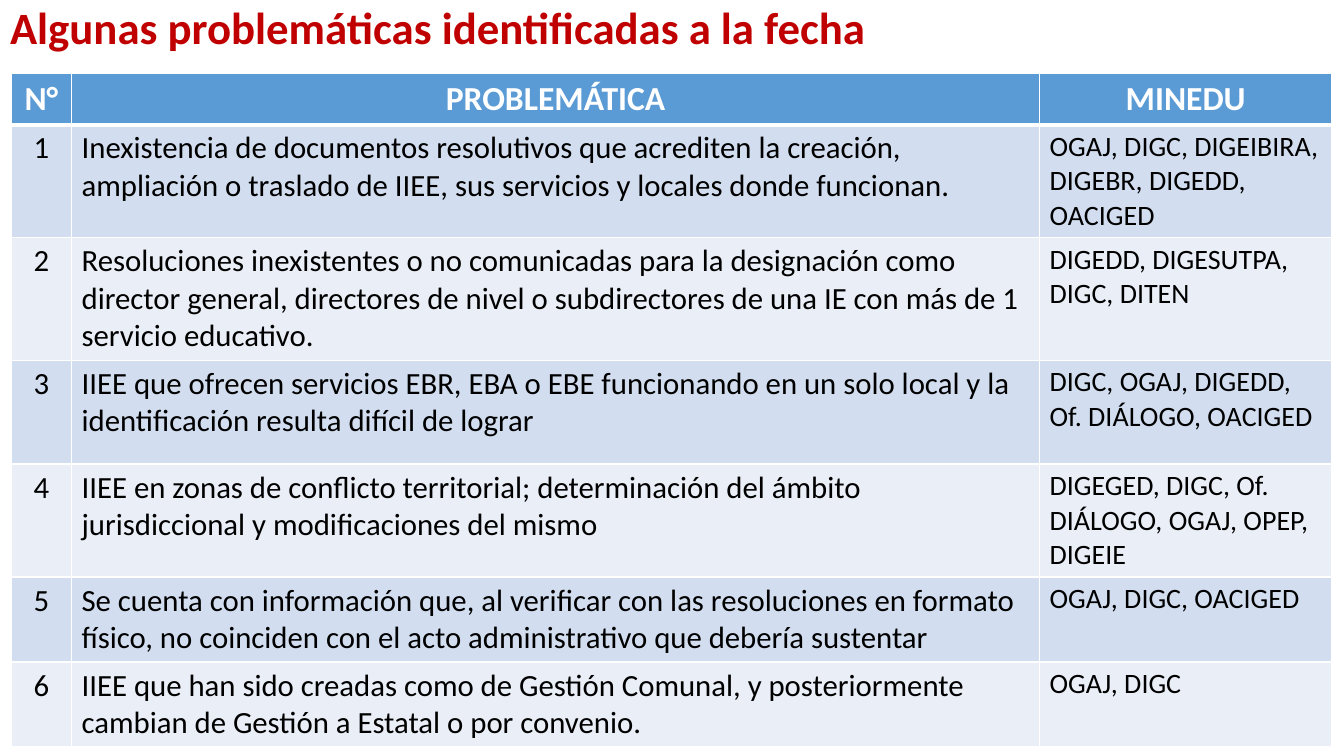
import pptx
import pptx.dml.color
import pptx.enum.text
import pptx.oxml
import pptx.oxml.ns
import pptx.util

Inches, Pt = pptx.util.Inches, pptx.util.Pt
LEFT, CENTER = pptx.enum.text.PP_ALIGN.LEFT, pptx.enum.text.PP_ALIGN.CENTER
RGB = pptx.dml.color.RGBColor.from_string

HEADER = ("N°", "PROBLEMÁTICA", "MINEDU")
ISSUES = [
    ("Inexistencia de documentos resolutivos que acrediten la creación, ampliación o "
     "traslado de IIEE, sus servicios y locales donde funcionan.",
     "OGAJ, DIGC, DIGEIBIRA, DIGEBR, DIGEDD, OACIGED"),
    ("Resoluciones inexistentes o no comunicadas para la designación como director general, "
     "directores de nivel o subdirectores de una IE con más de 1 servicio educativo.",
     "DIGEDD, DIGESUTPA, DIGC, DITEN"),
    ("IIEE que ofrecen servicios EBR, EBA o EBE funcionando en un solo local y la "
     "identificación resulta difícil de lograr",
     "DIGC, OGAJ, DIGEDD, Of. DIÁLOGO, OACIGED"),
    ("IIEE en zonas de conflicto territorial; determinación del ámbito jurisdiccional y "
     "modificaciones del mismo",
     "DIGEGED, DIGC, Of. DIÁLOGO, OGAJ, OPEP, DIGEIE"),
    ("Se cuenta con información que, al verificar con las resoluciones en formato físico, "
     "no coinciden con el acto administrativo que debería sustentar",
     "OGAJ, DIGC, OACIGED"),
    ("IIEE que han sido creadas como de Gestión Comunal, y posteriormente cambian de "
     "Gestión a Estatal o por convenio.",
     "OGAJ, DIGC"),
]
COL_WIDTHS = (0.6, 9.6, 2.9)
ROW_HEIGHTS = (0.42,) + (1.03,) * 4 + (0.72,) * 2
BODY_SIZES = (22, 22, 20)
BANDS = ("EAEFF7", "D2DEEF")


def write(tf, text, size, color="000000", bold=False, align=LEFT):
    p = tf.paragraphs[0]
    p.alignment = align
    r = p.add_run()
    r.text = text
    r.font.name, r.font.size, r.font.bold = "Calibri", Pt(size), bold
    r.font.color.rgb = RGB(color)
    return p


def style_cell(cell, fill, bottom):
    """Give a cell white borders, with the bottom one in points, and a solid fill."""
    tcPr = cell._tc.get_or_add_tcPr()
    for side, width in (("L", 1), ("R", 1), ("T", 1), ("B", bottom)):
        tcPr.append(pptx.oxml.parse_xml(
            f'<a:ln{side} {pptx.oxml.ns.nsdecls("a")} w="{Pt(width)}"><a:solidFill>'
            f'<a:srgbClr val="FFFFFF"/></a:solidFill></a:ln{side}>'))
    cell.fill.solid()
    cell.fill.fore_color.rgb = RGB(fill)


prs = pptx.Presentation()
prs.slide_width, prs.slide_height = Inches(13.33), Inches(7.5)
s = prs.slides.add_slide(prs.slide_layouts[5])

title = s.shapes.title
title.left, title.top, title.width, title.height = 0, 0, Inches(10.78), Inches(0.59)
title.text_frame.vertical_anchor = pptx.enum.text.MSO_ANCHOR.MIDDLE
p = write(title.text_frame, "Algunas problemáticas identificadas a la fecha", 32,
          color="C00000", bold=True)
p.line_spacing = 0.9

rows = [HEADER] + [(str(n), *issue) for n, issue in enumerate(ISSUES, 1)]
table = s.shapes.add_table(len(rows), len(HEADER), Inches(0.11), Inches(0.73),
                           Inches(sum(COL_WIDTHS)), Inches(sum(ROW_HEIGHTS))).table
for col, width in zip(table.columns, COL_WIDTHS):
    col.width = Inches(width)
for i, (row, height) in enumerate(zip(rows, ROW_HEIGHTS)):
    table.rows[i].height = Inches(height)
    for j, text in enumerate(row):
        cell = table.cell(i, j)
        if i == 0:
            style_cell(cell, "5B9BD5", bottom=3)
            write(cell.text_frame, text, 24, color="FFFFFF", bold=True, align=CENTER)
        else:
            style_cell(cell, BANDS[i % 2], bottom=1)
            write(cell.text_frame, text, BODY_SIZES[j], align=LEFT if j else CENTER)

prs.save("out.pptx")
